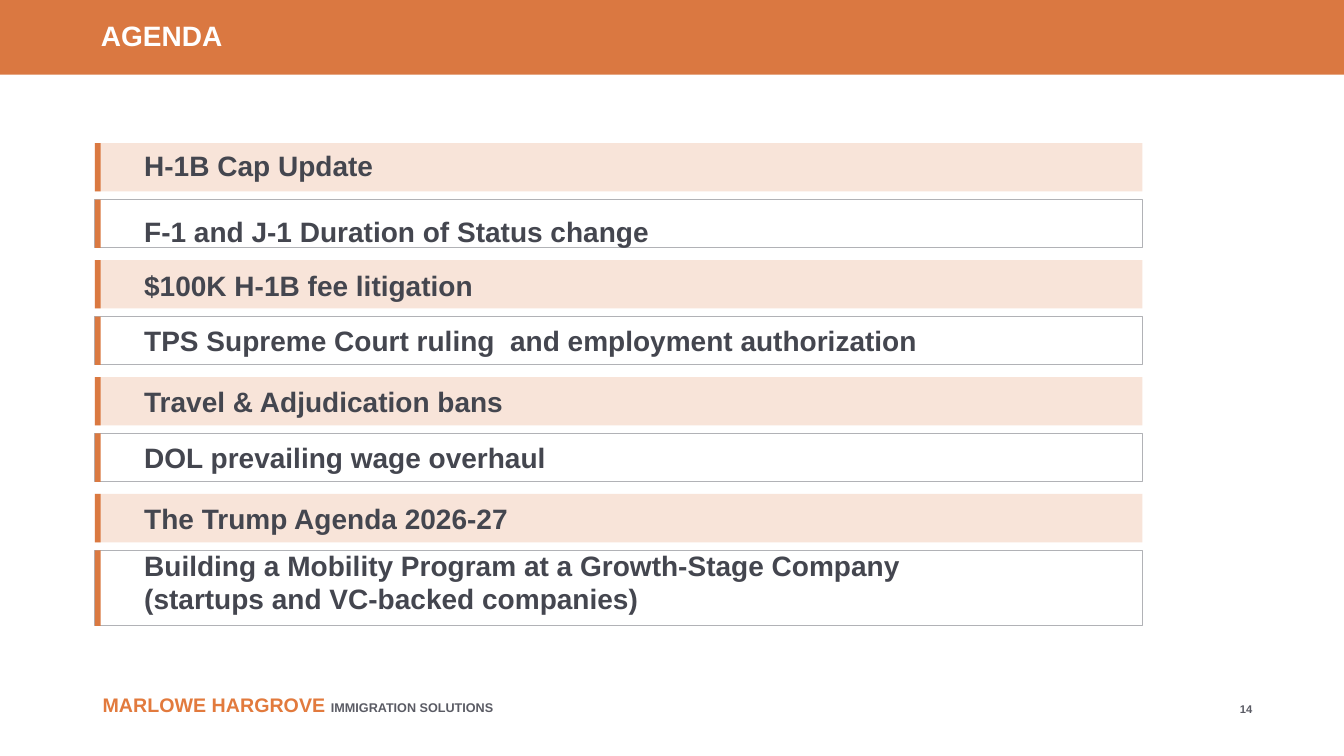
from pptx import Presentation
from pptx.dml.color import RGBColor
from pptx.enum.shapes import MSO_SHAPE
from pptx.enum.text import MSO_ANCHOR, PP_ALIGN
from pptx.util import Inches, Pt

THEME = {
    "font": "Arial",
    "color": {"band": "DA7841", "accent": "DA7941", "tint": "F8E4D9",
              "white": "FFFFFF", "rule": "B1B2B6", "ink": "44464F",
              "brand": "E27A3D", "muted": "5A5B64"},
    "size": {"head": 20, "brand": 14, "tagline": 9, "number": 8},
}

prs = Presentation()
prs.slide_width, prs.slide_height = Inches(13.33), Inches(7.5)
s = prs.slides.add_slide(prs.slide_layouts[6])


def color(name):
    return RGBColor.from_string(THEME["color"][name])


def add_box(at, fill=None, line=None, lines=(), inset=(0, 0),
            anchor=MSO_ANCHOR.MIDDLE, align=PP_ALIGN.LEFT):
    """Add a filled rectangle or a text box; each line is a list of runs."""
    at = [Inches(v) for v in at]
    if fill:
        sp = s.shapes.add_shape(MSO_SHAPE.RECTANGLE, *at)
        sp.shadow.inherit = False
        sp.fill.solid()
        sp.fill.fore_color.rgb = color(fill)
        if line:
            sp.line.color.rgb = color(line)
            sp.line.width = Pt(0.71)
        else:
            sp.line.fill.background()
    else:
        sp = s.shapes.add_textbox(*at)
    tf = sp.text_frame
    tf.word_wrap = True
    tf.vertical_anchor = anchor
    tf.margin_left = tf.margin_right = Inches(inset[0])
    tf.margin_top = tf.margin_bottom = Inches(inset[1])
    for i, runs in enumerate(lines):
        p = tf.add_paragraph() if i else tf.paragraphs[0]
        p.alignment = align
        for text, size, ink in runs:
            r = p.add_run()
            r.text = text
            r.font.name = THEME["font"]
            r.font.size = Pt(THEME["size"][size])
            r.font.bold = True
            r.font.color.rgb = color(ink)
    return sp


# Footer
add_box((0.92, 6.83, 6.6, 0.64), inset=(0.1, 0.05), anchor=MSO_ANCHOR.TOP,
        lines=[[("MARLOWE HARGROVE ", "brand", "brand"),
                ("IMMIGRATION SOLUTIONS", "tagline", "muted")]])

# Title band
title = add_box((0, 0, 13.33, 0.74), fill="band", inset=(1, 0.05),
                lines=[[("AGENDA", "head", "white")]])
title.text_frame.paragraphs[0].line_spacing = 0.9

# Slide number
add_box((12.17, 6.83, 0.25, 0.4), inset=(0, 0.05), align=PP_ALIGN.RIGHT,
        lines=[[("14", "number", "muted")]])

# Agenda rows: text lines, then the text box's drop, width and height
LEFT, TEXT_LEFT, ROW_W, BAR_W = 0.94, 1.43, 10.39, 0.06
TOP, PAIR_PITCH, PAIR_STEP = 1.42, 1.16, 0.56
ROW_H, LAST_H = 0.48, 0.75
agenda = [
    (["H-1B Cap Update"], 0, 2.7, 0.44),
    (["F-1 and J-1 Duration of Status change"], 0.2, 5.28, 0.23),
    (["$100K H-1B fee litigation"], 0.01, 6.94, ROW_H),
    (["TPS Supreme Court ruling  and employment authorization"], 0, 9.55, ROW_H),
    (["Travel & Adjudication bans"], 0, 9.2, ROW_H),
    (["DOL prevailing wage overhaul"], 0, 8.89, ROW_H),
    (["The Trump Agenda 2026-27"], 0, 9.55, ROW_H),
    (["Building a Mobility Program at a Growth-Stage Company",
      "(startups and VC-backed companies)"], 0, 9.55, 0.62),
]
for i, (lines, drop, text_w, text_h) in enumerate(agenda):
    pair, outlined = divmod(i, 2)
    top = TOP + pair * PAIR_PITCH + outlined * PAIR_STEP
    row_h = LAST_H if i == len(agenda) - 1 else ROW_H
    add_box((LEFT, top, ROW_W, row_h), fill="white" if outlined else "tint",
            line="rule" if outlined else None)
    add_box((LEFT, top, BAR_W, row_h), fill="accent")
    add_box((TEXT_LEFT, top + drop, text_w, text_h),
            lines=[[(text, "head", "ink")] for text in lines])

prs.save("out.pptx")
